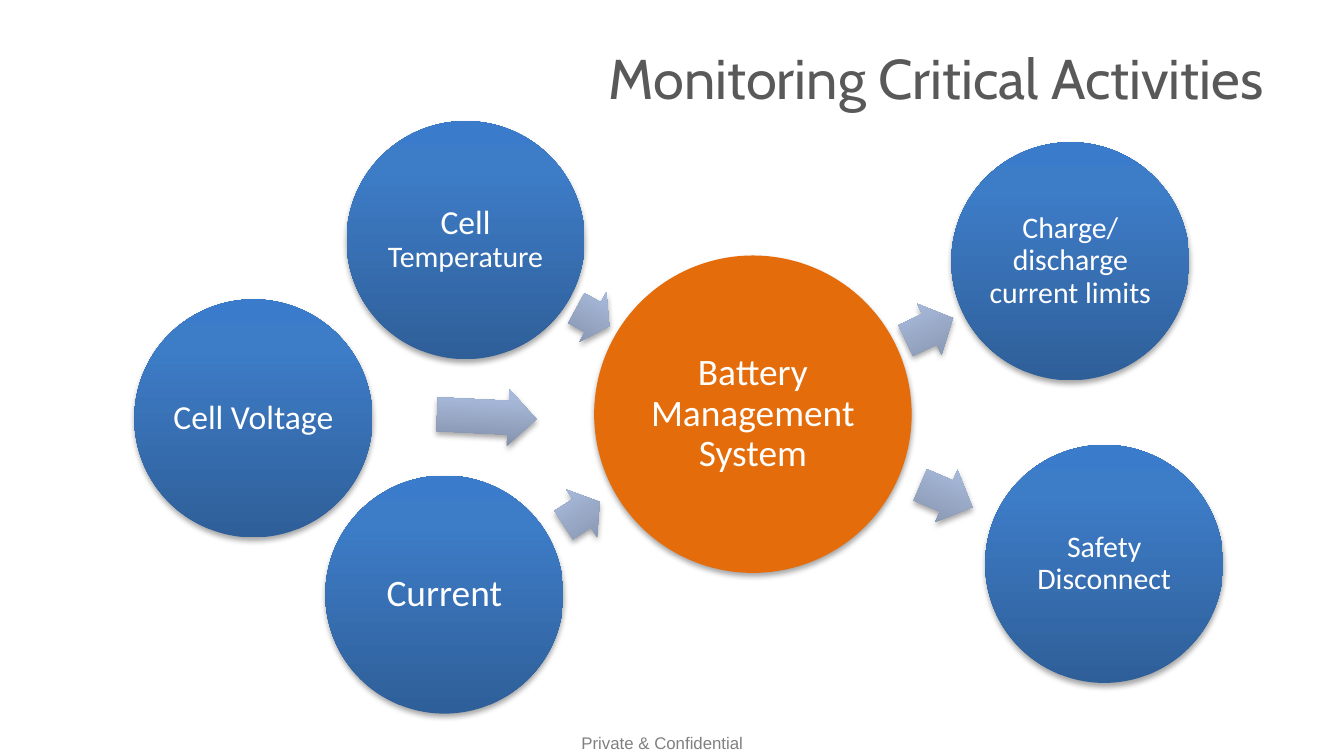
from pptx import Presentation
from pptx.dml.color import RGBColor
from pptx.enum.shapes import MSO_SHAPE
from pptx.enum.text import MSO_ANCHOR, PP_ALIGN
from pptx.oxml import parse_xml
from pptx.util import Cm, Pt

NS = 'xmlns:a="http://schemas.openxmlformats.org/drawingml/2006/main"'
BLUE = ("2F5F99", "3D7CC7", "3A7CCB")
GREY = ("818FA8", "A7B9DA", "A7BADC")
DISC = 4.5


def color(text):
    return RGBColor.from_string(text)


def write(shape, *runs, font="Calibri", hue="FFFFFF", align=PP_ALIGN.CENTER,
          anchor=MSO_ANCHOR.MIDDLE, inset=None, line=None):
    frame = shape.text_frame
    frame.word_wrap = True
    frame.vertical_anchor = anchor
    if inset is not None:
        frame.margin_left = frame.margin_right = Cm(inset)
        frame.margin_top = frame.margin_bottom = Cm(inset)
    para = frame.paragraphs[0]
    para.alignment = align
    para.line_spacing = line
    for text, size in runs:
        run = para.add_run()
        run.text = text
        run.font.name = font
        run.font.size = Pt(size)
        run.font.color.rgb = color(hue)


def shade(shape, hues):
    stops = "".join(
        f'<a:gs pos="{pos}"><a:srgbClr val="{hue}"/></a:gs>'
        for pos, hue in zip((0, 80000, 100000), hues))
    fill = parse_xml(
        f'<a:gradFill {NS} rotWithShape="1"><a:gsLst>{stops}</a:gsLst>'
        '<a:lin ang="16200000" scaled="0"/></a:gradFill>')
    shape._element.spPr.find(
        "{http://schemas.openxmlformats.org/drawingml/2006/main}prstGeom").addnext(fill)


def cast(shape):
    shape.shadow.inherit = False
    shape._element.spPr.effectLst.append(parse_xml(
        f'<a:outerShdw {NS} blurRad="{Pt(3.1)}" dist="{Pt(1.8)}" dir="5400000" '
        'rotWithShape="0"><a:srgbClr val="000000"><a:alpha val="35000"/>'
        '</a:srgbClr></a:outerShdw>'))


def shape_at(slide, kind, x, y, w, h):
    shape = slide.shapes.add_shape(kind, Cm(x), Cm(y), Cm(w), Cm(h))
    shape.line.fill.background()
    cast(shape)
    return shape


def disc(slide, x, y, *runs, inset=0.07):
    shape = shape_at(slide, MSO_SHAPE.OVAL, x, y, DISC, DISC)
    shade(shape, BLUE)
    write(shape, *runs, inset=inset, line=0.9)


def arrow(slide, x, y, w, turn):
    shape = shape_at(slide, MSO_SHAPE.RIGHT_ARROW, x, y, w, 1.07)
    shape.adjustments[0] = 0.6
    shape.adjustments[1] = 0.5
    shape.rotation = turn
    shade(shape, GREY)


def label(slide, x, y, w, h, *runs, **form):
    box = slide.shapes.add_textbox(Cm(x), Cm(y), Cm(w), Cm(h))
    write(box, *runs, **form)


def hub(slide, x, y, size):
    shape = shape_at(slide, MSO_SHAPE.OVAL, x, y, size, size)
    shape.fill.solid()
    shape.fill.fore_color.rgb = color("E46C0A")
    write(shape, ("Battery Management System", 20), inset=0.07, line=0.9)


def inputs(slide, x, y):
    arrow(slide, x + 8.31, y + 3.17, 0.71, 28.5)
    disc(slide, x + 4.01, y, ("Cell", 18), (" Temperature", 16))
    arrow(slide, x + 8.05, y + 6.88, 0.81, 327.2)
    disc(slide, x + 3.61, y + 6.7, ("Current", 20))
    arrow(slide, x + 5.72, y + 5.05, 1.88, 2.8)
    disc(slide, x, y + 3.37, ("Cell Voltage", 18))


def outputs(slide, x, y):
    arrow(slide, x, y + 3, 0.99, 334.5)
    disc(slide, x + 0.91, y, ("Charge/ discharge current limits", 16), inset=0.05)
    arrow(slide, x + 0.28, y + 6.15, 1.07, 23.2)
    disc(slide, x + 1.55, y + 5.72, ("Safety Disconnect", 16), inset=0.05)


def main():
    deck = Presentation()
    deck.slide_width, deck.slide_height = Cm(25.4), Cm(14.29)
    slide = deck.slides.add_slide(deck.slide_layouts[6])
    label(slide, 9.9, 13.72, 5.23, 0.64, ("Private & Confidential", 9),
          font="Arial", hue="808080", anchor=MSO_ANCHOR.TOP)
    label(slide, 8.1, 0.64, 16.03, 1.65, ("Monitoring Critical Activities", 30),
          font="Cabin", hue="595959", align=PP_ALIGN.RIGHT)
    hub(slide, 11.23, 4.83, 6)
    inputs(slide, 2.54, 2.29)
    outputs(slide, 17.07, 2.69)
    deck.save("out.pptx")


if __name__ == "__main__":
    main()
